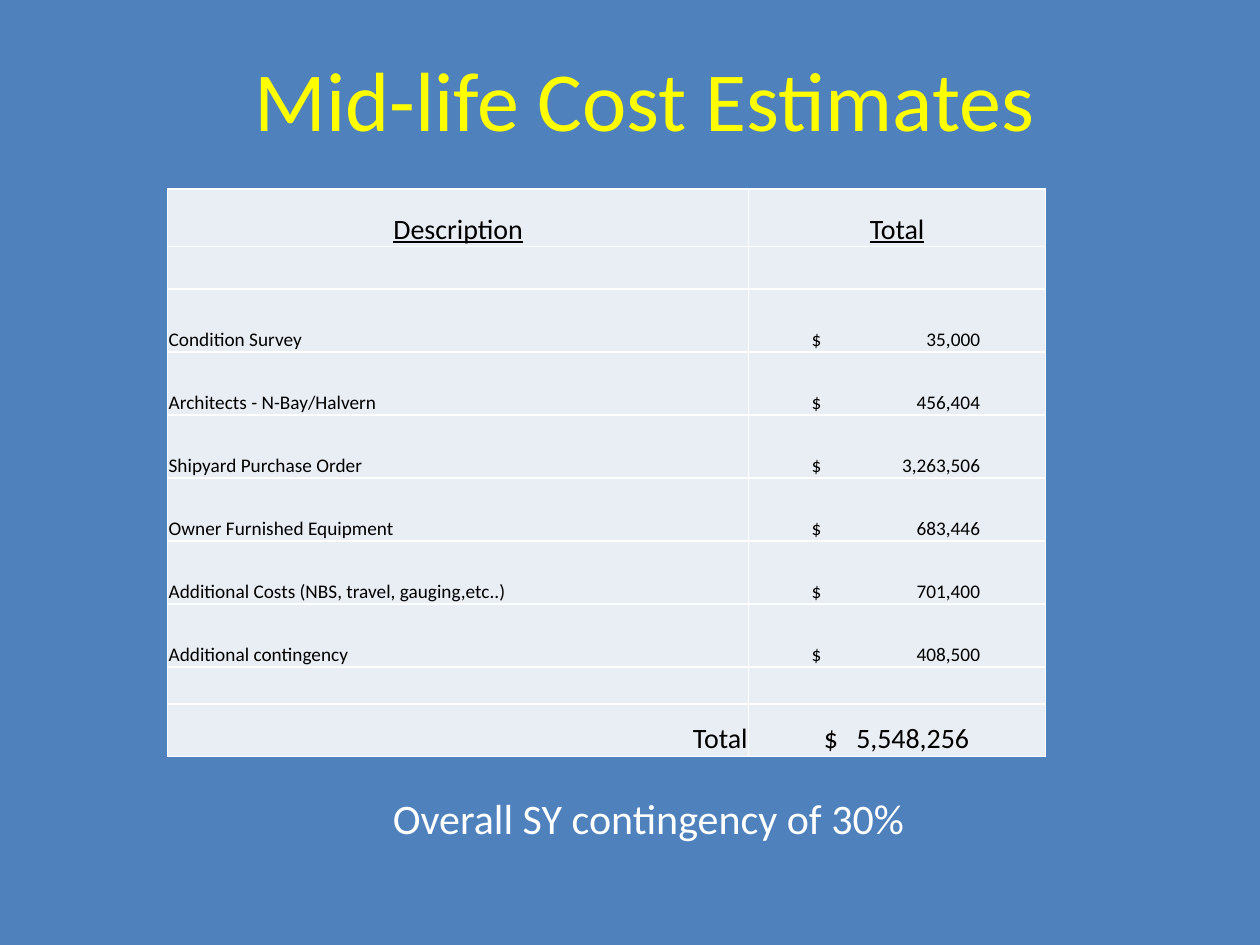
from dataclasses import dataclass

from lxml.etree import SubElement
from pptx import Presentation
from pptx.dml.color import RGBColor
from pptx.enum.text import MSO_ANCHOR as Anchor, MSO_AUTO_SIZE as AutoSize, PP_ALIGN as Align
from pptx.oxml.ns import qn
from pptx.util import Cm, Pt


@dataclass(frozen=True)
class Theme:
    font: str = "Calibri"
    background: str = "4F81BD"
    title: str = "FFFF00"
    light: str = "FFFFFF"
    ink: str = "000000"
    cell: str = "E9EDF4"
    title_size: int = 48
    caption_size: int = 24
    heading_size: int = 16
    item_size: int = 11
    border: float = 1


THEME = Theme()
COSTS = [
    ("Condition Survey", "35,000"),
    ("Architects - N-Bay/Halvern", "456,404"),
    ("Shipyard Purchase Order", "3,263,506"),
    ("Owner Furnished Equipment", "683,446"),
    ("Additional Costs (NBS, travel, gauging,etc..)", "701,400"),
    ("Additional contingency", "408,500"),
]
GRAND_TOTAL = "5,548,256"
COLUMN_WIDTHS = [11.71, 5.99]
ROW_HEIGHTS = [1.16, 0.86] + [1.27] * len(COSTS) + [0.74, 1.06]


def add_run(paragraph, text, size, color, underline=None):
    run = paragraph.add_run()
    run.text = text
    font = run.font
    font.name, font.size, font.underline = THEME.font, Pt(size), underline
    font.color.rgb = RGBColor.from_string(color)


def add_line(slide, text, left, top, width, height, size, color, wrap):
    box = slide.shapes.add_textbox(Cm(left), Cm(top), Cm(width), Cm(height))
    frame = box.text_frame
    frame.word_wrap = wrap
    frame.auto_size = AutoSize.SHAPE_TO_FIT_TEXT
    add_run(frame.paragraphs[0], text, size, color)


def style_cell(cell):
    cell.margin_left = cell.margin_right = cell.margin_top = Cm(0.02)
    cell.margin_bottom = Cm(0)
    cell.vertical_anchor = Anchor.BOTTOM
    properties = cell._tc.get_or_add_tcPr()
    for side in ("lnL", "lnR", "lnT", "lnB"):
        line = SubElement(properties, qn(f"a:{side}"), w=str(Pt(THEME.border)))
        fill = SubElement(line, qn("a:solidFill"))
        SubElement(fill, qn("a:srgbClr"), val=THEME.light)
    cell.fill.solid()
    cell.fill.fore_color.rgb = RGBColor.from_string(THEME.cell)
    ending = cell.text_frame.paragraphs[0]._p.get_or_add_endParaRPr()
    ending.set("sz", str(THEME.item_size * 100))


def write_label(cell, text, size, align=Align.LEFT, underline=None):
    paragraph = cell.text_frame.paragraphs[0]
    paragraph.alignment = align
    add_run(paragraph, text, size, THEME.ink, underline)


def write_amount(cell, amount, size, indent, span):
    cell.margin_left = Cm(indent)
    write_label(cell, f"$\t{amount}", size)
    tabs = SubElement(cell.text_frame.paragraphs[0]._p.get_or_add_pPr(), qn("a:tabLst"))
    SubElement(tabs, qn("a:tab"), pos=str(Cm(span)), algn="r")


def add_cost_table(slide):
    frame = slide.shapes.add_table(
        len(ROW_HEIGHTS), len(COLUMN_WIDTHS), Cm(3.38), Cm(3.81),
        Cm(sum(COLUMN_WIDTHS)), Cm(sum(ROW_HEIGHTS)))
    costs = frame.table
    costs.first_row = costs.horz_banding = False
    for column, width in zip(costs.columns, COLUMN_WIDTHS):
        column.width = Cm(width)
    for row, height in zip(costs.rows, ROW_HEIGHTS):
        row.height = Cm(height)
    for cell in costs.iter_cells():
        style_cell(cell)

    for column, heading in enumerate(("Description", "Total")):
        write_label(costs.cell(0, column), heading, THEME.heading_size, Align.CENTER, True)
    for row, (description, amount) in enumerate(COSTS, start=2):
        write_label(costs.cell(row, 0), description, THEME.item_size)
        write_amount(costs.cell(row, 1), amount, THEME.item_size, 1.27, 3.4)
    last = len(ROW_HEIGHTS) - 1
    write_label(costs.cell(last, 0), "Total", THEME.heading_size, Align.RIGHT)
    write_amount(costs.cell(last, 1), GRAND_TOTAL, THEME.heading_size, 1.52, 2.93)


def main():
    deck = Presentation()
    deck.slide_width, deck.slide_height = Cm(25.4), Cm(19.05)
    slide = deck.slides.add_slide(deck.slide_layouts[6])
    backdrop = slide.background.fill
    backdrop.solid()
    backdrop.fore_color.rgb = RGBColor.from_string(THEME.background)

    add_line(slide, "Mid-life Cost Estimates", 4.88, 0.84, 16.79, 2.31,
             THEME.title_size, THEME.title, False)
    add_cost_table(slide)
    add_line(slide, "Overall SY contingency of 30%", 7.67, 15.85, 11.23, 1.27,
             THEME.caption_size, THEME.light, True)
    deck.save("out.pptx")


if __name__ == "__main__":
    main()
